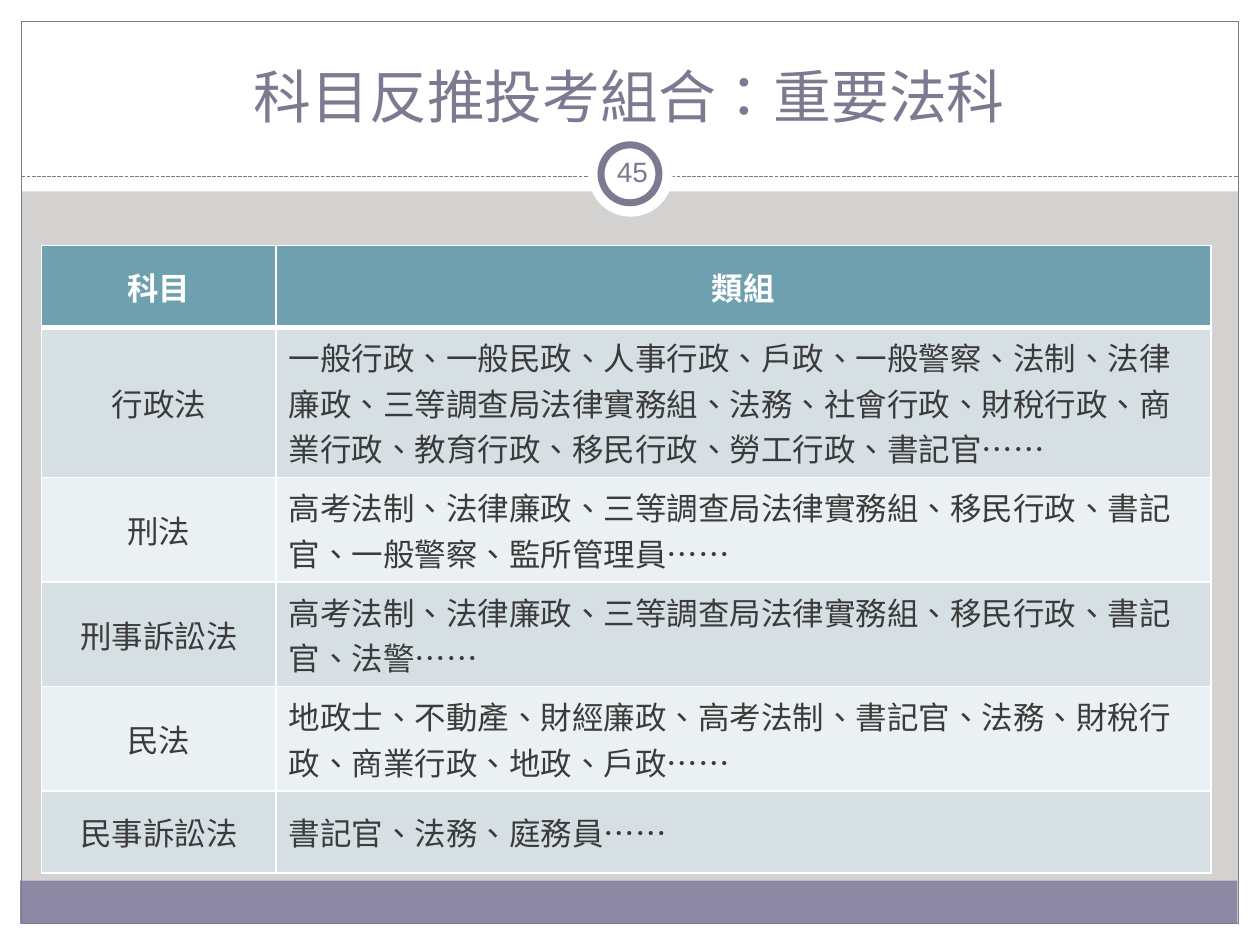
from lxml.etree import SubElement
from pptx import Presentation
from pptx.dml.color import RGBColor
from pptx.enum.dml import MSO_LINE
from pptx.enum.lang import MSO_LANGUAGE_ID as LANGUAGE
from pptx.enum.shapes import MSO_CONNECTOR, MSO_SHAPE
from pptx.enum.text import MSO_ANCHOR as ANCHOR, PP_ALIGN as ALIGN
from pptx.oxml.ns import qn
from pptx.util import Inches, Pt

COLORS = {
    "background": "D4D2D0",
    "white": "FFFFFF",
    "footer": "8D89A4",
    "accent": "7C7991",
    "header": "6EA0B0",
    "band_dark": "D5DFE4",
    "band_light": "EBF0F2",
    "text": "3B3B3B",
}
FONT = "Arial"
ROWS = [
    ("科目", "類組"),
    ("行政法", "一般行政、一般民政、人事行政、戶政、一般警察、法制、法律廉政、三等調查局法律實務組、法務、社會行政、財稅行政、商業行政、教育行政、移民行政、勞工行政、書記官……"),
    ("刑法", "高考法制、法律廉政、三等調查局法律實務組、移民行政、書記官、一般警察、監所管理員……"),
    ("刑事訴訟法", "高考法制、法律廉政、三等調查局法律實務組、移民行政、書記官、法警……"),
    ("民法", "地政士、不動產、財經廉政、高考法制、書記官、法務、財稅行政、商業行政、地政、戶政……"),
    ("民事訴訟法", "書記官、法務、庭務員……"),
]
COLUMN_WIDTHS = (1.86, 7.42)
ROW_HEIGHTS = (0.65, 1.19, 0.83, 0.83, 0.83, 0.65)


def color(name):
    return RGBColor.from_string(COLORS[name])


def add_shape(slide, kind, box, fill=None, line=None, line_width=0.75):
    shape = slide.shapes.add_shape(kind, *map(Inches, box))
    shape.shadow.inherit = False
    if fill:
        shape.fill.solid()
        shape.fill.fore_color.rgb = color(fill)
    else:
        shape.fill.background()
    if line:
        shape.line.color.rgb = color(line)
        shape.line.width = Pt(line_width)
    else:
        shape.line.fill.background()


def add_divider(slide, left, right, y):
    line = slide.shapes.add_connector(
        MSO_CONNECTOR.STRAIGHT, Inches(left), Inches(y), Inches(right), Inches(y))
    line.line.color.rgb = color("accent")
    line.line.width = Pt(0.75)
    line.line.dash_style = MSO_LINE.SQUARE_DOT
    SubElement(line._element.spPr, qn("a:effectLst"))


def set_text(frame, text, size, color_name, align, bold=False):
    frame.word_wrap = True
    paragraph = frame.paragraphs[0]
    paragraph.text = text
    paragraph.alignment = align
    paragraph.runs[0].font.language_id = LANGUAGE.TRADITIONAL_CHINESE
    font = paragraph.font
    font.name, font.size, font.bold = FONT, Pt(size), bold
    font.color.rgb = color(color_name)


def add_text(slide, box, text, size, anchor, inset_x=0.1):
    frame = slide.shapes.add_textbox(*map(Inches, box)).text_frame
    frame.vertical_anchor = anchor
    frame.margin_left = frame.margin_right = Inches(inset_x)
    set_text(frame, text, size, "accent", ALIGN.CENTER)


def set_borders(cell, top, bottom):
    properties = cell._tc.get_or_add_tcPr()
    for side, width in (("L", 1), ("R", 1), ("T", top), ("B", bottom)):
        line = SubElement(properties, qn(f"a:ln{side}"), w=str(Pt(width)))
        fill = SubElement(line, qn("a:solidFill"))
        SubElement(fill, qn("a:srgbClr"), val=COLORS["white"])


def add_subject_table(slide, left, top):
    table = slide.shapes.add_table(
        len(ROWS), len(COLUMN_WIDTHS), Inches(left), Inches(top),
        Inches(sum(COLUMN_WIDTHS)), Inches(sum(ROW_HEIGHTS))).table
    table.horz_banding = False
    for column, width in zip(table.columns, COLUMN_WIDTHS):
        column.width = Inches(width)
    for row_index, (texts, height) in enumerate(zip(ROWS, ROW_HEIGHTS)):
        table.rows[row_index].height = Inches(height)
        is_header = row_index == 0
        band = "band_dark" if row_index % 2 else "band_light"
        for column_index, text in enumerate(texts):
            cell = table.cell(row_index, column_index)
            set_borders(cell, 3 if row_index == 1 else 1, 3 if is_header else 1)
            cell.fill.solid()
            cell.fill.fore_color.rgb = color("header" if is_header else band)
            cell.vertical_anchor = ANCHOR.MIDDLE
            centered = is_header or column_index == 0
            set_text(cell.text_frame, text, 18, "white" if is_header else "text",
                     ALIGN.CENTER if centered else ALIGN.LEFT, is_header)


def add_frame(slide):
    for box in ((0, 7.33, 10, 0.17), (0, 0, 10, 1.52),
                (0, 0, 0.17, 7.5), (9.83, 0, 0.17, 7.5)):
        add_shape(slide, MSO_SHAPE.RECTANGLE, box, "white")
    add_shape(slide, MSO_SHAPE.RECTANGLE, (0.16, 6.99, 9.66, 0.34), "footer")
    add_shape(slide, MSO_SHAPE.RECTANGLE, (0.17, 0.17, 9.66, 7.16), line="accent")
    add_divider(slide, 0.17, 9.83, 1.4)
    add_shape(slide, MSO_SHAPE.OVAL, (4.67, 1.05, 0.67, 0.67), "white")
    add_shape(slide, MSO_SHAPE.OVAL, (4.77, 1.15, 0.46, 0.46), "white", "accent", 4)


def main():
    presentation = Presentation()
    presentation.slide_width = Inches(10)
    presentation.slide_height = Inches(7.5)
    slide = presentation.slides.add_slide(presentation.slide_layouts[6])
    slide.background.fill.solid()
    slide.background.fill.fore_color.rgb = color("background")
    add_frame(slide)
    add_text(slide, (0.33, 0.25, 9.33, 0.83), "科目反推投考組合：重要法科", 33, ANCHOR.BOTTOM)
    add_subject_table(slide, 0.33, 1.95)
    add_text(slide, (4.77, 1.12, 0.5, 0.48), "45", 16, ANCHOR.MIDDLE, 0.05)
    presentation.save("out.pptx")


if __name__ == "__main__":
    main()
